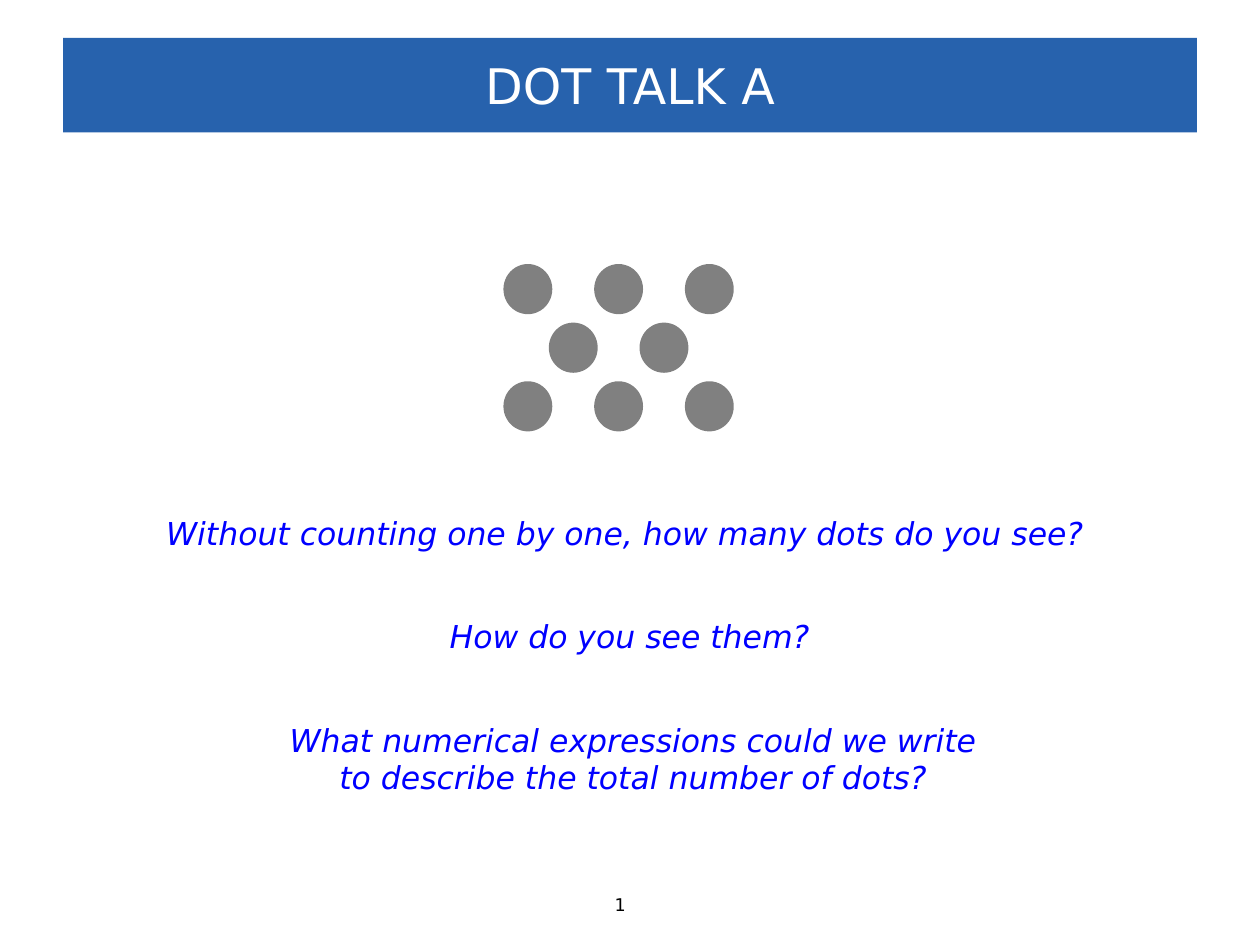
from dataclasses import dataclass

from pptx import Presentation
from pptx.dml.color import RGBColor
from pptx.enum.shapes import MSO_SHAPE
from pptx.enum.text import MSO_ANCHOR, MSO_AUTO_SIZE, PP_ALIGN
from pptx.util import Inches, Pt

OVAL = MSO_SHAPE.OVAL
MIDDLE = MSO_ANCHOR.MIDDLE
NO_FIT = MSO_AUTO_SIZE.NONE
LEFT, CENTER = PP_ALIGN.LEFT, PP_ALIGN.CENTER
TITLE_ONLY = 5


@dataclass(frozen=True)
class Theme:
    font: str = "DejaVu Sans"
    banner: RGBColor = RGBColor(0x27, 0x62, 0xAD)
    title: RGBColor = RGBColor(0xFF, 0xFF, 0xFF)
    question: RGBColor = RGBColor(0x00, 0x00, 0xFF)
    number: RGBColor = RGBColor(0x00, 0x00, 0x00)
    dot: RGBColor = RGBColor(0x80, 0x80, 0x80)
    title_size: int = 28
    question_size: int = 18
    number_size: int = 10


theme = Theme()


def write(sp, text, size, color, align=LEFT, italic=False, wrap=True):
    tf = sp.text_frame
    tf.word_wrap = wrap
    tf.auto_size = NO_FIT
    p = tf.paragraphs[0]
    p.alignment = align
    r = p.add_run()
    r.text = text
    r.font.name = theme.font
    r.font.size = Pt(size)
    r.font.color.rgb = color
    r.font.bold = False
    r.font.italic = italic


prs = Presentation()
prs.slide_width, prs.slide_height = Inches(10), Inches(7.5)
s = prs.slides.add_slide(prs.slide_layouts[TITLE_ONLY])

title = s.shapes.title
title.left, title.top = Inches(0.5), Inches(0.3)
title.width, title.height = Inches(9), Inches(0.75)
title.fill.solid()
title.fill.fore_color.rgb = theme.banner
write(title, "DOT TALK A", theme.title_size, theme.title, align=CENTER)
title.text_frame.vertical_anchor = MIDDLE

questions = [
    ("Without counting one by one, how many dots do you see?", 1.22, 4.03, 7.61, 0.4, LEFT, False),
    ("How do you see them?", 3.47, 4.85, 3.11, 0.4, LEFT, False),
    ("What numerical expressions could we write to describe the total number of dots?",
     2.08, 5.67, 5.89, 0.71, CENTER, True),
]
for text, x, y, w, h, align, wrap in questions:
    sp = s.shapes.add_textbox(Inches(x), Inches(y), Inches(w), Inches(h))
    write(sp, text, theme.question_size, theme.question, align=align, italic=True, wrap=wrap)

dot_w, dot_h = 0.36, 0.37
pitch_x, pitch_y = 0.72, 0.465
dots_left, dots_top = 4.01, 2.11
dots = s.shapes.add_group_shape()
for row, count in enumerate([3, 2, 3]):
    indent = (3 - count) * pitch_x / 2
    for col in range(count):
        x = dots_left + indent + col * pitch_x
        y = dots_top + row * pitch_y
        sp = dots.shapes.add_shape(OVAL, Inches(x), Inches(y), Inches(dot_w), Inches(dot_h))
        sp.shadow.inherit = False
        sp.fill.solid()
        sp.fill.fore_color.rgb = theme.dot
        sp.line.color.rgb = theme.dot
        sp.line.width = Pt(2)

sp = s.shapes.add_textbox(Inches(4.78), Inches(7.05), Inches(0.44), Inches(0.27))
write(sp, "1", theme.number_size, theme.number, wrap=False)

prs.save("out.pptx")
